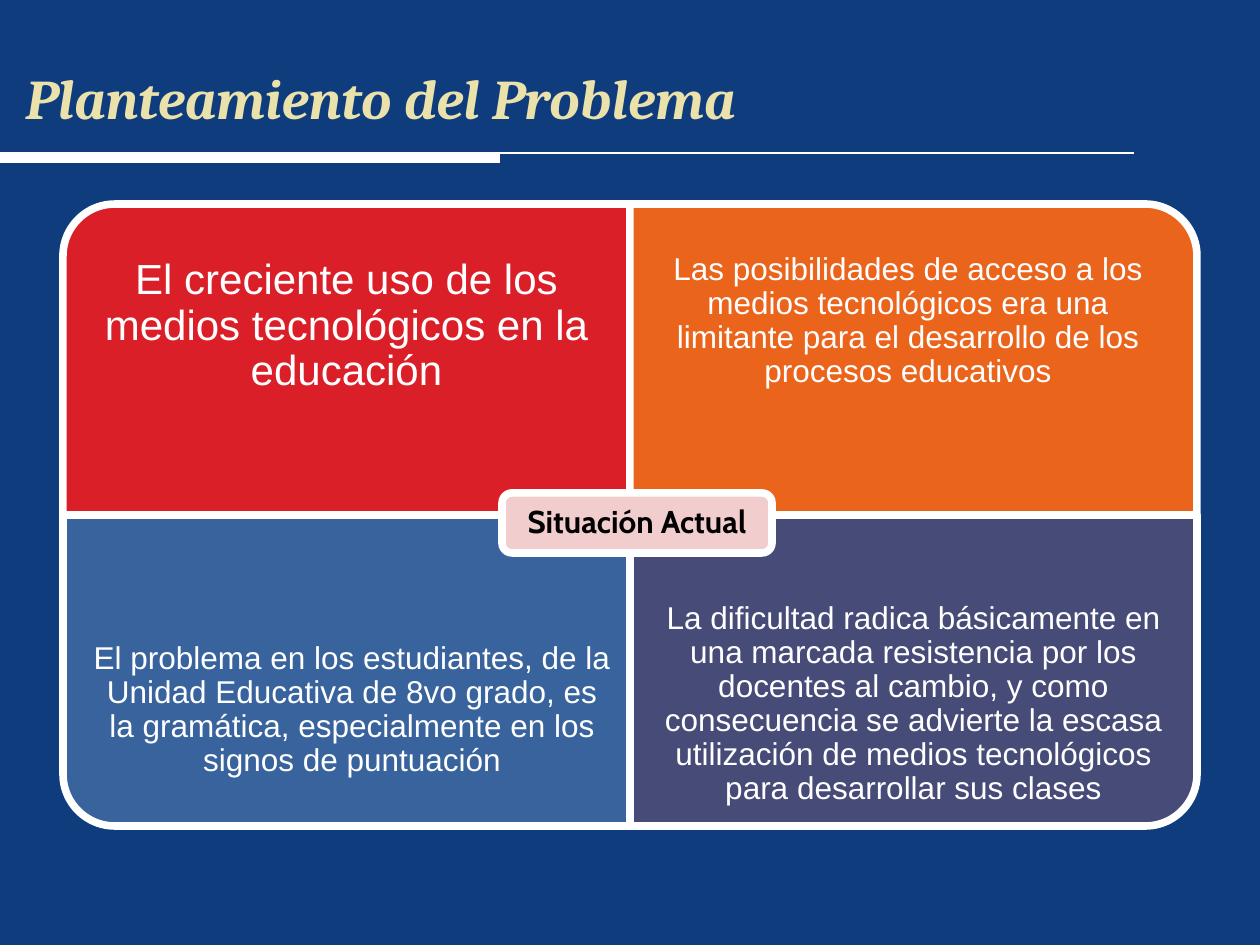
from dataclasses import dataclass

from lxml import etree
from pptx import Presentation
from pptx.dml.color import RGBColor
from pptx.enum.shapes import MSO_CONNECTOR, MSO_SHAPE
from pptx.enum.text import MSO_ANCHOR, MSO_AUTO_SIZE, PP_ALIGN
from pptx.oxml.ns import qn
from pptx.util import Pt

STRAIGHT = MSO_CONNECTOR.STRAIGHT
ROUND_ONE, ROUND_ALL = MSO_SHAPE.ROUND_1_RECTANGLE, MSO_SHAPE.ROUNDED_RECTANGLE
MIDDLE = MSO_ANCHOR.MIDDLE
LEFT, CENTER = PP_ALIGN.LEFT, PP_ALIGN.CENTER
NO_FIT = MSO_AUTO_SIZE.NONE

NAVY = RGBColor(0x0F, 0x3C, 0x7D)
CREAM = RGBColor(0xEA, 0xE2, 0xAA)
WHITE = RGBColor(0xFF, 0xFF, 0xFF)
BLACK = RGBColor(0, 0, 0)
RED = RGBColor(0xDA, 0x1F, 0x28)
ORANGE = RGBColor(0xEB, 0x64, 0x1B)
BLUE = RGBColor(0x39, 0x63, 0x9D)
PURPLE = RGBColor(0x47, 0x4B, 0x78)
PINK = RGBColor(0xF1, 0xCD, 0xCD)

PX_PER_INCH = 126
BORDER_PT = 4.33
MATRIX_LEFT, MATRIX_TOP = 63, 204
QUAD_W, QUAD_H = 567, 311


@dataclass(frozen=True)
class Box:
    left: int
    top: int
    width: int
    height: int


@dataclass(frozen=True)
class Quadrant:
    col: int
    row: int
    rotation: int
    fill: RGBColor
    text_box: Box
    inset: int
    size: int
    text: str


QUADRANTS = [
    Quadrant(0, 0, 270, RED, Box(63, 215, 567, 223), 24, 24,
             "El creciente uso de los medios tecnológicos en la educación"),
    Quadrant(1, 0, 0, ORANGE, Box(630, 204, 556, 234), 18, 18,
             "Las posibilidades de acceso a los medios tecnológicos era una "
             "limitante para el desarrollo de los procesos educativos"),
    Quadrant(0, 1, 180, BLUE, Box(74, 593, 556, 234), 18, 18,
             "El problema en los estudiantes, de la Unidad Educativa de 8vo grado, "
             "es la gramática, especialmente en los signos de puntuación"),
    Quadrant(1, 1, 90, PURPLE, Box(630, 593, 567, 223), 18, 18,
             "La dificultad radica básicamente en una marcada resistencia por los "
             "docentes al cambio, y como consecuencia se advierte la escasa "
             "utilización de medios tecnológicos para desarrollar sus clases"),
]


def px(n: float) -> int:
    return round(n * 914400 / PX_PER_INCH)


def place(box: Box) -> tuple[int, ...]:
    return tuple(px(n) for n in (box.left, box.top, box.width, box.height))


def add_rule(s, x1: int, x2: int, y: int, width: float) -> None:
    rule = s.shapes.add_connector(STRAIGHT, px(x1), px(y), px(x2), px(y))
    rule.line.color.rgb = WHITE
    rule.line.width = Pt(width)
    etree.SubElement(rule._element.spPr, qn("a:effectLst"))


def add_panel(s, kind, box: Box, fill: RGBColor, rotation: int = 0):
    """Add a white-bordered shape; box is its frame before rotation."""
    sp = s.shapes.add_shape(kind, *place(box))
    sp.rotation = rotation
    sp.shadow.inherit = False
    sp.fill.solid()
    sp.fill.fore_color.rgb = fill
    sp.line.color.rgb = WHITE
    sp.line.width = Pt(BORDER_PT)
    return sp


def write(tf, text: str, inset: int, size: int, font: str, color: RGBColor,
          bold: bool = False) -> None:
    tf.word_wrap = True
    tf.vertical_anchor = MIDDLE
    tf.margin_left = tf.margin_top = tf.margin_right = tf.margin_bottom = px(inset)
    tf.text = text
    p = tf.paragraphs[0]
    p.alignment = CENTER
    p.line_spacing = 0.9
    style(p.runs[0], size, font, color, bold)


def style(r, size: int, font: str, color: RGBColor, bold: bool) -> None:
    r.font.size = Pt(size)
    r.font.name = font
    r.font.color.rgb = color
    r.font.bold = bold


def add_title(s) -> None:
    title = s.shapes.title
    title.left, title.top, title.width, title.height = place(Box(13, 66, 1124, 63))
    tf = title.text_frame
    tf.text = "Planteamiento del Problema"
    tf.auto_size = NO_FIT
    tf.vertical_anchor = MIDDLE
    p = tf.paragraphs[0]
    p.alignment = LEFT
    style(p.runs[0], 32, "Cambria", CREAM, True)
    p.runs[0].font.italic = True


def add_quadrant(s, q: Quadrant) -> None:
    sideways = q.rotation % 180 == 90
    w, h = (QUAD_H, QUAD_W) if sideways else (QUAD_W, QUAD_H)
    left = MATRIX_LEFT + q.col * QUAD_W + (QUAD_W - w) // 2
    top = MATRIX_TOP + q.row * QUAD_H + (QUAD_H - h) // 2
    add_panel(s, ROUND_ONE, Box(left, top, w, h), q.fill, q.rotation)
    tb = s.shapes.add_textbox(*place(q.text_box))
    write(tb.text_frame, q.text, q.inset, q.size, "Arial", WHITE)


def main() -> None:
    prs = Presentation()
    prs.slide_width, prs.slide_height = px(1260), px(945)
    s = prs.slides.add_slide(prs.slide_layouts[5])
    s.background.fill.solid()
    s.background.fill.fore_color.rgb = NAVY

    add_rule(s, 0, 1134, 153, 1.5)
    add_rule(s, 0, 500, 158, 6)
    add_title(s)
    for q in QUADRANTS:
        add_quadrant(s, q)
    label = add_panel(s, ROUND_ALL, Box(502, 493, 270, 60), PINK)
    write(label.text_frame, "Situación Actual", 9, 18, "Cabin", BLACK, True)

    prs.save("out.pptx")


if __name__ == "__main__":
    main()
